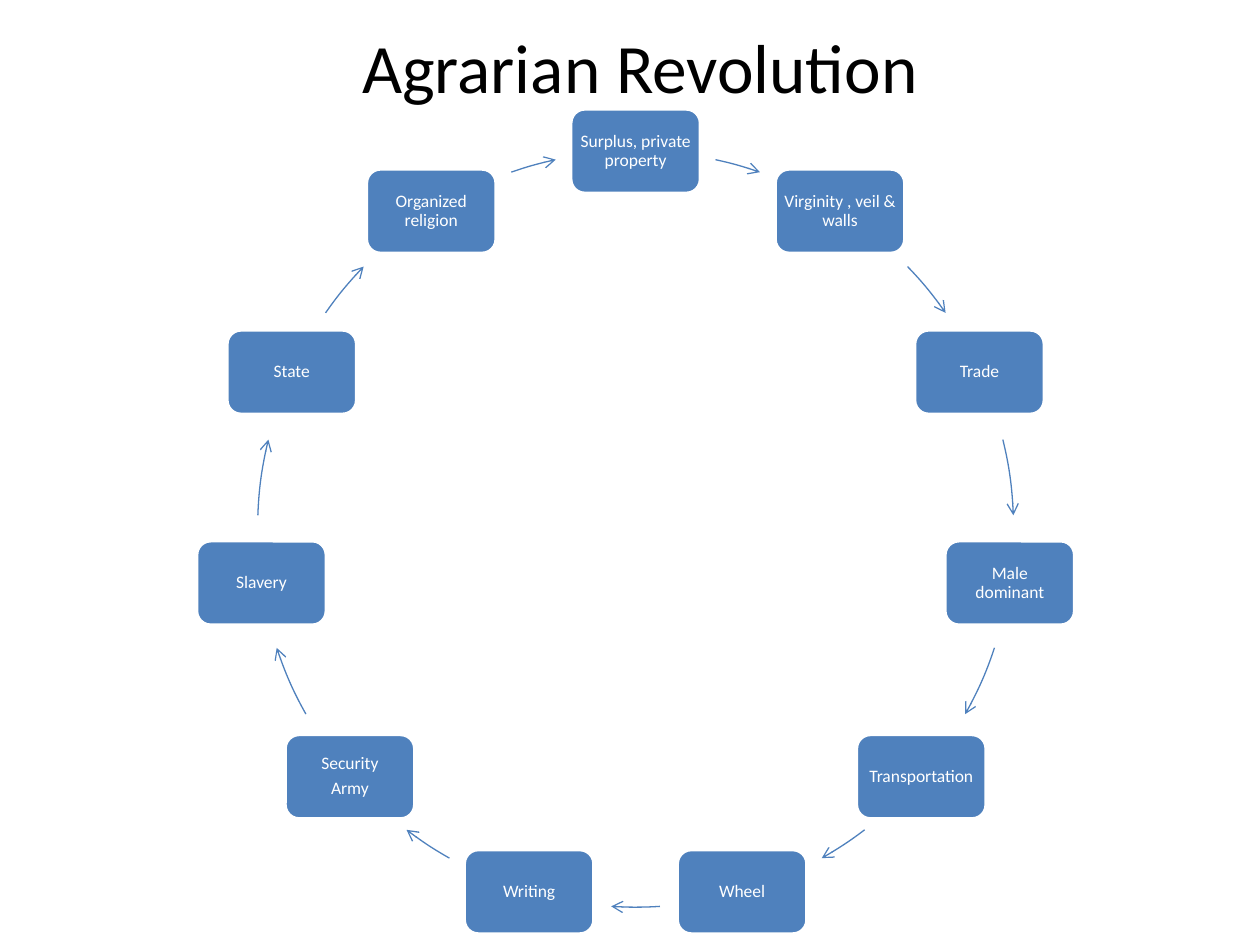
from math import cos, radians, sin

from lxml.etree import SubElement
from pptx import Presentation
from pptx.dml.color import RGBColor
from pptx.enum.shapes import MSO_SHAPE
from pptx.enum.text import MSO_ANCHOR, PP_ALIGN
from pptx.oxml.ns import qn
from pptx.util import Inches, Pt

BLUE = RGBColor(0x4F, 0x81, 0xBD)
WHITE = RGBColor(0xFF, 0xFF, 0xFF)
BLACK = RGBColor(0x00, 0x00, 0x00)

CENTER_X, CENTER_Y, RADIUS = 5.045, 4.2, 3
BOX_W, BOX_H = 1.03, 0.67

STEPS = [
    "Surplus, private property", "Virginity , veil & walls", "Trade",
    "Male\vdominant", "Transportation", "Wheel", "Writing",
    "Security\nArmy", "Slavery", "State", "Organized religion",
]
# Start and end of each arrow in degrees clockwise from the top;
# the left half of the cycle mirrors the right half.
RIGHT_ARROWS = [(12.2, 19.2), (46, 55.1), (76.3, 87.9), (108.3, 119.3),
                (142.7, 150.5)]
ARROWS = (RIGHT_ARROWS + [(176.3, 183.7)]
          + [(360 - end, 360 - start) for start, end in reversed(RIGHT_ARROWS)])


class CycleSlide:
    font = "Calibri"

    def __init__(self, prs):
        self.s = prs.slides.add_slide(prs.slide_layouts[5])

    def set_text(self, tf, text, size, color, margin, **paragraph_format):
        tf.word_wrap = True
        tf.vertical_anchor = MSO_ANCHOR.MIDDLE
        for side in ("left", "right", "top", "bottom"):
            setattr(tf, f"margin_{side}", Inches(margin))
        tf.text = text
        for p in tf.paragraphs:
            p.alignment = PP_ALIGN.CENTER
            for name, value in paragraph_format.items():
                setattr(p, name, value)
            for r in p.runs:
                r.font.name = self.font
                r.font.size = Pt(size)
                r.font.color.rgb = color

    def title(self, text):
        sp = self.s.shapes.title
        place = {"left": 0.58, "top": 0.17, "width": 9, "height": 0.7}
        for name, value in place.items():
            setattr(sp, name, Inches(value))
        self.set_text(sp.text_frame, text, 39.6, BLACK, 0.05)

    def shape(self, kind, x, y, w, h, line_color, line_width):
        """Add an unshadowed preset shape centred on (x, y)."""
        sp = self.s.shapes.add_shape(kind, Inches(x - w / 2), Inches(y - h / 2),
                                     Inches(w), Inches(h))
        sp.shadow.inherit = False
        sp.line.color.rgb = line_color
        sp.line.width = Pt(line_width)
        return sp

    def box(self, text, angle):
        x = CENTER_X + RADIUS * sin(radians(angle))
        y = CENTER_Y - RADIUS * cos(radians(angle))
        sp = self.shape(MSO_SHAPE.ROUNDED_RECTANGLE, x, y, BOX_W, BOX_H, WHITE, 2)
        sp.fill.solid()
        sp.fill.fore_color.rgb = BLUE
        self.set_text(sp.text_frame, text, 10, WHITE, 0.04,
                      line_spacing=0.9, space_after=Pt(3.5))

    def arrow(self, start, end):
        sp = self.shape(MSO_SHAPE.ARC, CENTER_X, CENTER_Y,
                        2 * RADIUS, 2 * RADIUS, BLUE, 0.75)
        sp.fill.background()
        for i, angle in enumerate((start, end)):
            # Arc angles run clockwise from the right, in 60000ths of a degree,
            # and adjustments are scaled by 100000.
            sp.adjustments[i] = (angle - 90) % 360 * 0.6
        SubElement(sp.element.spPr.find(qn("a:ln")), qn("a:tailEnd"), type="arrow")


def main():
    prs = Presentation()
    prs.slide_width, prs.slide_height = Inches(10), Inches(7.5)
    cycle = CycleSlide(prs)
    cycle.title("Agrarian Revolution")
    for i, (text, span) in enumerate(zip(STEPS, ARROWS)):
        cycle.box(text, i * 360 / len(STEPS))
        cycle.arrow(*span)
    prs.save("out.pptx")


if __name__ == "__main__":
    main()
